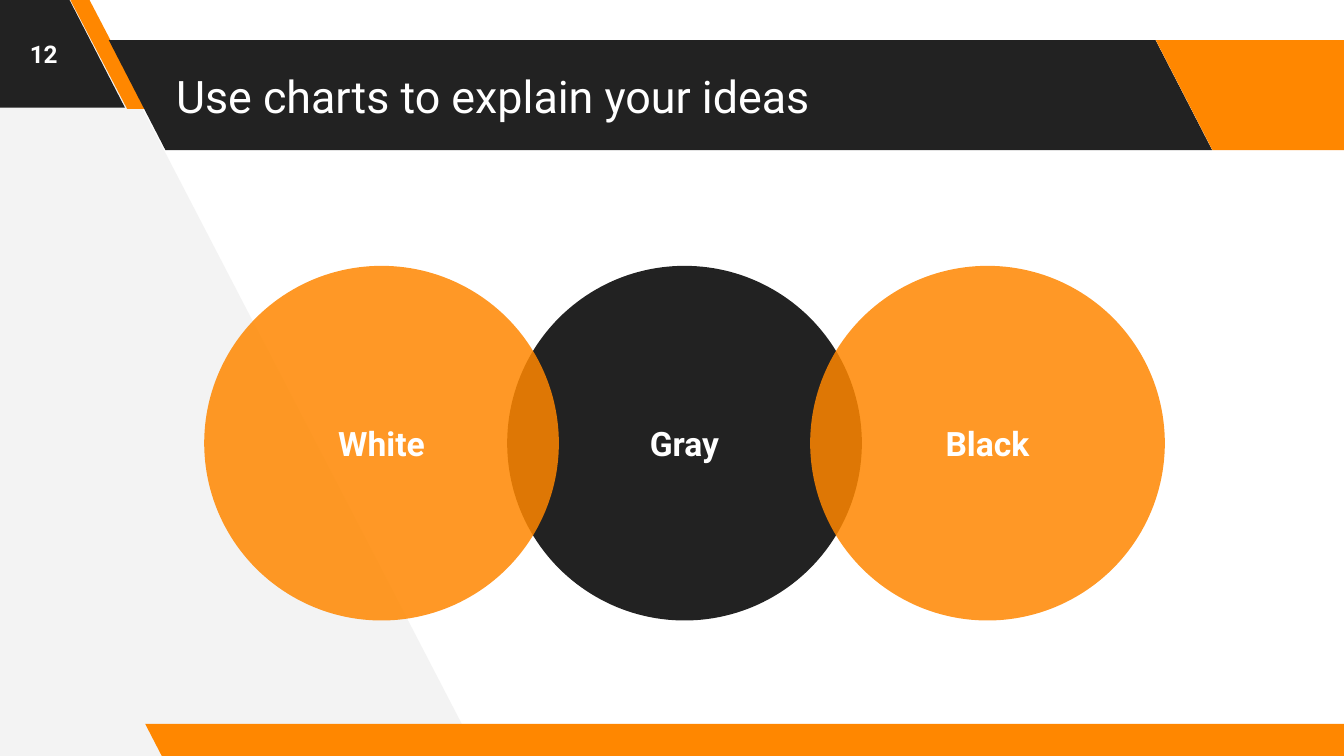
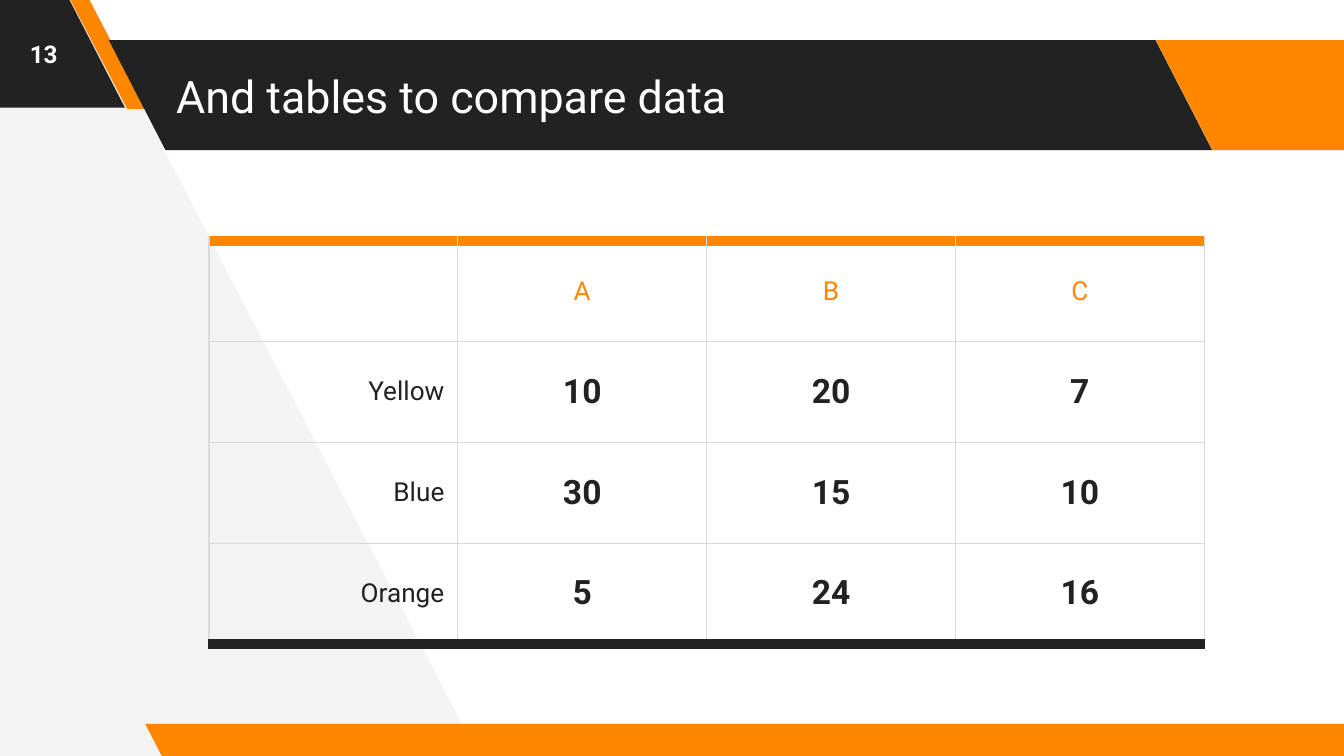
import lxml.etree
import pptx
import pptx.dml.color
import pptx.enum.shapes
import pptx.enum.text
import pptx.oxml.ns
import pptx.util

Pt = pptx.util.Pt
qn = pptx.oxml.ns.qn
SHAPES = pptx.enum.shapes.MSO_SHAPE
ALIGN = pptx.enum.text.PP_ALIGN
MIDDLE = pptx.enum.text.MSO_ANCHOR.MIDDLE

COLORS = {"orange": "FF8700", "dark": "222222", "pale": "F3F3F3",
          "rule": "D9D9D9", "white": "FFFFFF"}
FONT = "Roboto"


def paint(shape, color):
    shape.fill.solid()
    shape.fill.fore_color.rgb = pptx.dml.color.RGBColor.from_string(COLORS[color])
    shape.line.fill.background()
    shape.shadow.inherit = False


def write(frame, text, size, color="white", bold=False, align=ALIGN.CENTER):
    frame.word_wrap = True
    frame.vertical_anchor = MIDDLE
    paragraph = frame.paragraphs[0]
    paragraph.alignment = align
    run = paragraph.add_run()
    run.text = text
    run.font.name = FONT
    run.font.size = Pt(size)
    run.font.bold = bold
    run.font.color.rgb = pptx.dml.color.RGBColor.from_string(COLORS[color])


deck = pptx.Presentation()
deck.slide_width, deck.slide_height = Pt(720), Pt(405)
layout = deck.slide_layouts.get_by_name("Title Only")
charts = deck.slides.add_slide(layout)
tables = deck.slides.add_slide(layout)

# Shared backdrop: drawn once, then moved behind the layout's placeholders
outline = charts.shapes.build_freeform(Pt(256.3), Pt(405))
outline.add_line_segments([(Pt(44.6), Pt(-2.9)), (Pt(-4.3), Pt(-2.9)), (Pt(-1.4), Pt(407.5))])
wedge = outline.convert_to_shape()
paint(wedge, "pale")
backdrop = [wedge]

bands = [
    (-71.3, -1.4, 138.2, 59, 0.515, "dark"),
    (37.4, -0.7, 41, 59, 0.75, "orange"),
    (58.3, 21.5, 591.1, 59, 0.515, "dark"),
    (619.2, 21.5, 138.2, 59, 0.515, "orange"),
    (77.8, 387.8, 658.8, 18, 0.515, "orange"),
]
for left, top, width, height, slant, color in bands:
    band = charts.shapes.add_shape(SHAPES.PARALLELOGRAM, Pt(left), Pt(top), Pt(width), Pt(height))
    band.adjustments[0] = slant
    band.element.spPr.find(qn("a:xfrm")).set("flipH", "1")
    paint(band, color)
    backdrop.append(band)

for position, part in enumerate(backdrop, start=2):
    layout.shapes.element.insert(position, part.element)

# Titles and page numbers
headings = [(charts, "Use charts to explain your ideas", "12"),
            (tables, "And tables to compare data", "13")]
for slide, heading, number in headings:
    title = slide.shapes.title
    title.left, title.top, title.width, title.height = Pt(87.1), Pt(21.5), Pt(529.2), Pt(59)
    write(title.text_frame, heading, 24, align=ALIGN.LEFT)
    title.text_frame.auto_size = pptx.enum.text.MSO_AUTO_SIZE.NONE

    page_number = slide.shapes.add_textbox(0, 0, Pt(46.8), Pt(57.6))
    write(page_number.text_frame, number, 13, bold=True)

    for frame in (title.text_frame, page_number.text_frame):
        frame.margin_left = frame.margin_right = Pt(7.2)
        frame.margin_top = frame.margin_bottom = Pt(7.2)

# Three overlapping circles, the dark one at the back
DIAMETER, STEP = 190, 162.3
for place, label, color, opacity in [(1, "Gray", "dark", 100), (0, "White", "orange", 85),
                                     (2, "Black", "orange", 85)]:
    circle = charts.shapes.add_shape(SHAPES.OVAL, Pt(109.4 + place * STEP), Pt(142.4),
                                     Pt(DIAMETER), Pt(DIAMETER))
    paint(circle, color)
    write(circle.text_frame, label, 18, bold=True)
    if opacity < 100:
        tint = circle.element.spPr.find(qn("a:solidFill")).find(qn("a:srgbClr"))
        lxml.etree.SubElement(tint, qn("a:alpha")).set("val", str(opacity * 1000))

# Comparison table
ROWS = [["", "A", "B", "C"],
        ["Yellow", "10", "20", "7"],
        ["Blue", "30", "15", "10"],
        ["Orange", "5", "24", "16"]]
COLUMN, ROW = 133.3, 54
comparison = tables.shapes.add_table(4, 4, Pt(112), Pt(129), Pt(4 * COLUMN), Pt(4 * ROW)).table
comparison.first_row = comparison.horz_banding = False
for column in comparison.columns:
    column.width = Pt(COLUMN)

for r, values in enumerate(ROWS):
    comparison.rows[r].height = Pt(ROW)
    for c, value in enumerate(values):
        cell = comparison.cell(r, c)
        cell.margin_left = cell.margin_right = Pt(7.2)
        cell.margin_top = cell.margin_bottom = Pt(5)
        cell.vertical_anchor = MIDDLE

        thin = ("rule", 0.75)
        borders = {"a:lnL": thin, "a:lnR": thin,
                   "a:lnT": ("orange", 6) if r == 0 else thin,
                   "a:lnB": ("dark", 6) if r == len(ROWS) - 1 else thin}
        properties = cell._tc.get_or_add_tcPr()
        for side, (color, weight) in borders.items():
            border = lxml.etree.SubElement(properties, qn(side), w=str(Pt(weight)))
            stroke = lxml.etree.SubElement(border, qn("a:solidFill"))
            lxml.etree.SubElement(stroke, qn("a:srgbClr"), val=COLORS[color])
        cell.fill.background()

        if r == 0 and value:
            write(cell.text_frame, value, 14, "orange")
        elif r and c == 0:
            write(cell.text_frame, value, 14, "dark", align=ALIGN.RIGHT)
        elif r:
            write(cell.text_frame, value, 18, "dark", bold=True)

deck.save("out.pptx")
